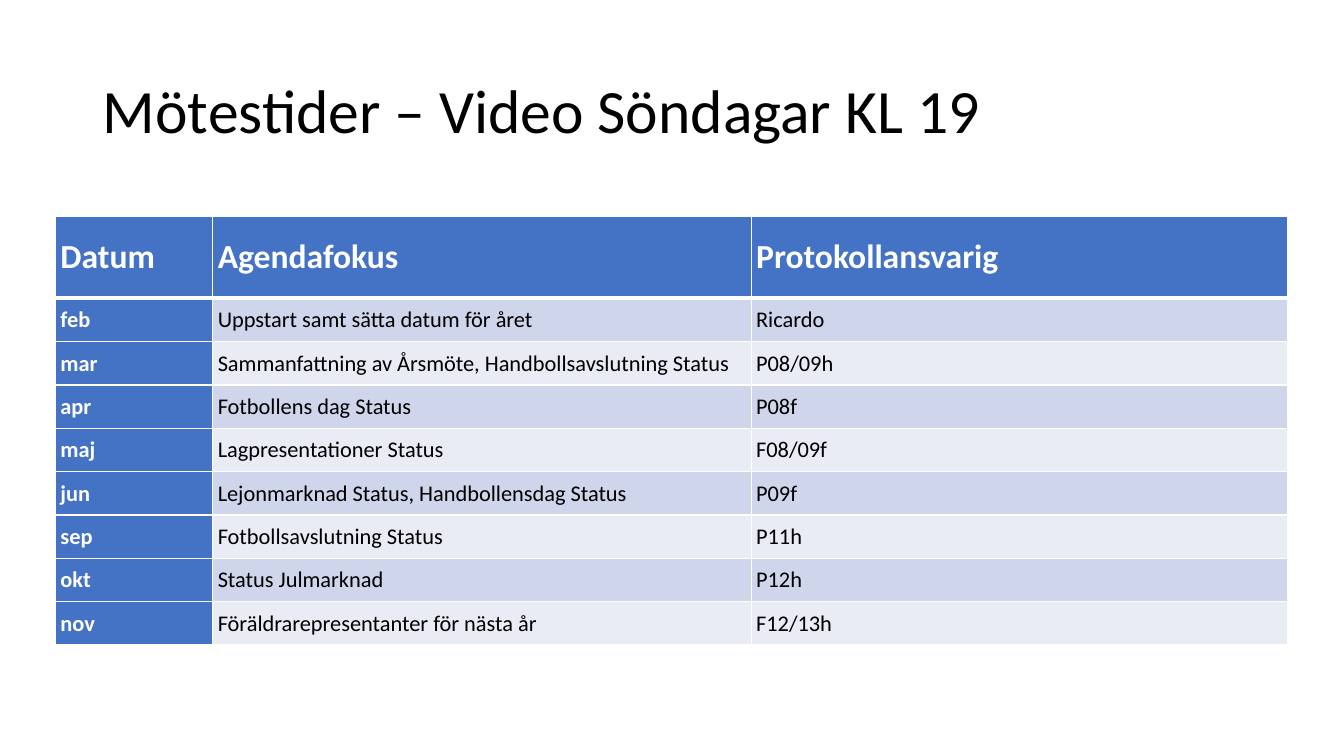
"""Build the slide with the yearly meeting schedule."""
from dataclasses import astuple, dataclass

from lxml import etree
from pptx import Presentation
from pptx import util as u
from pptx.dml.color import RGBColor
from pptx.enum import text
from pptx.oxml import ns

FONT = "Calibri"
COLORS = {
    "black": "000000",
    "white": "FFFFFF",
    "blue": "4472C4",
    "band_dark": "CFD5EA",
    "band_light": "E9EBF5",
}
COLUMN_WIDTHS = (1.56, 5.34, 5.32)
HEADER_HEIGHT, ROW_HEIGHT = 0.81, 0.43


@dataclass
class Meeting:
    """One row of the schedule."""
    date: str
    agenda: str
    secretary: str


HEADER = Meeting("Datum", "Agendafokus", "Protokollansvarig")
MEETINGS = [
    Meeting("feb", "Uppstart samt sätta datum för året", "Ricardo"),
    Meeting("mar", "Sammanfattning av Årsmöte, Handbollsavslutning Status", "P08/09h"),
    Meeting("apr", "Fotbollens dag Status", "P08f"),
    Meeting("maj", "Lagpresentationer Status", "F08/09f"),
    Meeting("jun", "Lejonmarknad Status, Handbollensdag Status", "P09f"),
    Meeting("sep", "Fotbollsavslutning Status", "P11h"),
    Meeting("okt", "Status Julmarknad", "P12h"),
    Meeting("nov", "Föräldrarepresentanter för nästa år", "F12/13h"),
]


def write(tf, content: str, *, size: float, color: str = "black", bold: bool = False,
          align=text.PP_ALIGN.LEFT, spacing: float = 1.0) -> None:
    """Write one formatted paragraph into a text frame."""
    p = tf.paragraphs[0]
    p.alignment, p.line_spacing = align, spacing
    r = p.add_run()
    r.text = content
    r.font.name, r.font.size, r.font.bold = FONT, u.Pt(size), bold
    r.font.color.rgb = RGBColor.from_string(COLORS[color])


def set_borders(cell, *, top: float = 1, bottom: float = 1) -> None:
    """Draw white borders, with widths in points, around a cell."""
    tc_pr = cell._tc.get_or_add_tcPr()
    for side, width in (("L", 1), ("R", 1), ("T", top), ("B", bottom)):
        ln = etree.SubElement(tc_pr, ns.qn(f"a:ln{side}"), w=str(u.Pt(width)))
        fill = etree.SubElement(ln, ns.qn("a:solidFill"))
        etree.SubElement(fill, ns.qn("a:srgbClr"), val=COLORS["white"])


def add_title(s, content: str) -> None:
    """Place and fill the title placeholder."""
    sp = s.shapes.title
    sp.left, sp.top = u.Inches(0.92), u.Inches(0.4)
    sp.width, sp.height = u.Inches(11.5), u.Inches(1.45)
    tf = sp.text_frame
    tf.word_wrap = True
    tf.vertical_anchor = text.MSO_ANCHOR.MIDDLE
    write(tf, content, size=44, spacing=0.9)


def add_schedule(s, rows: list[Meeting]) -> None:
    """Add the schedule table, whose first row is the header."""
    height = HEADER_HEIGHT + ROW_HEIGHT * (len(rows) - 1)
    table = s.shapes.add_table(
        len(rows), len(COLUMN_WIDTHS), u.Inches(0.55), u.Inches(2.15),
        u.Inches(sum(COLUMN_WIDTHS)), u.Inches(height)).table
    table.first_col = True
    for column, width in zip(table.columns, COLUMN_WIDTHS):
        column.width = u.Inches(width)
    for i, meeting in enumerate(rows):
        table.rows[i].height = u.Inches(ROW_HEIGHT if i else HEADER_HEIGHT)
        band = "band_dark" if i % 2 else "band_light"
        for j, content in enumerate(astuple(meeting)):
            cell = table.cell(i, j)
            heading = i == 0 or j == 0
            set_borders(cell, top=3 if i == 1 else 1, bottom=1 if i else 3)
            cell.fill.solid()
            cell.fill.fore_color.rgb = RGBColor.from_string(COLORS["blue" if heading else band])
            cell.vertical_anchor = text.MSO_ANCHOR.MIDDLE
            cell.margin_left = cell.margin_right = u.Inches(0.05)
            cell.margin_top = cell.margin_bottom = 0
            write(cell.text_frame, content, size=16 if i else 24,
                  color="white" if heading else "black", bold=heading)


def main() -> None:
    """Create and save the presentation."""
    prs = Presentation()
    prs.slide_width, prs.slide_height = u.Inches(13.33), u.Inches(7.5)
    s = prs.slides.add_slide(prs.slide_layouts[5])
    add_title(s, "Mötestider – Video Söndagar KL 19")
    add_schedule(s, [HEADER, *MEETINGS])
    prs.save("out.pptx")


if __name__ == "__main__":
    main()
